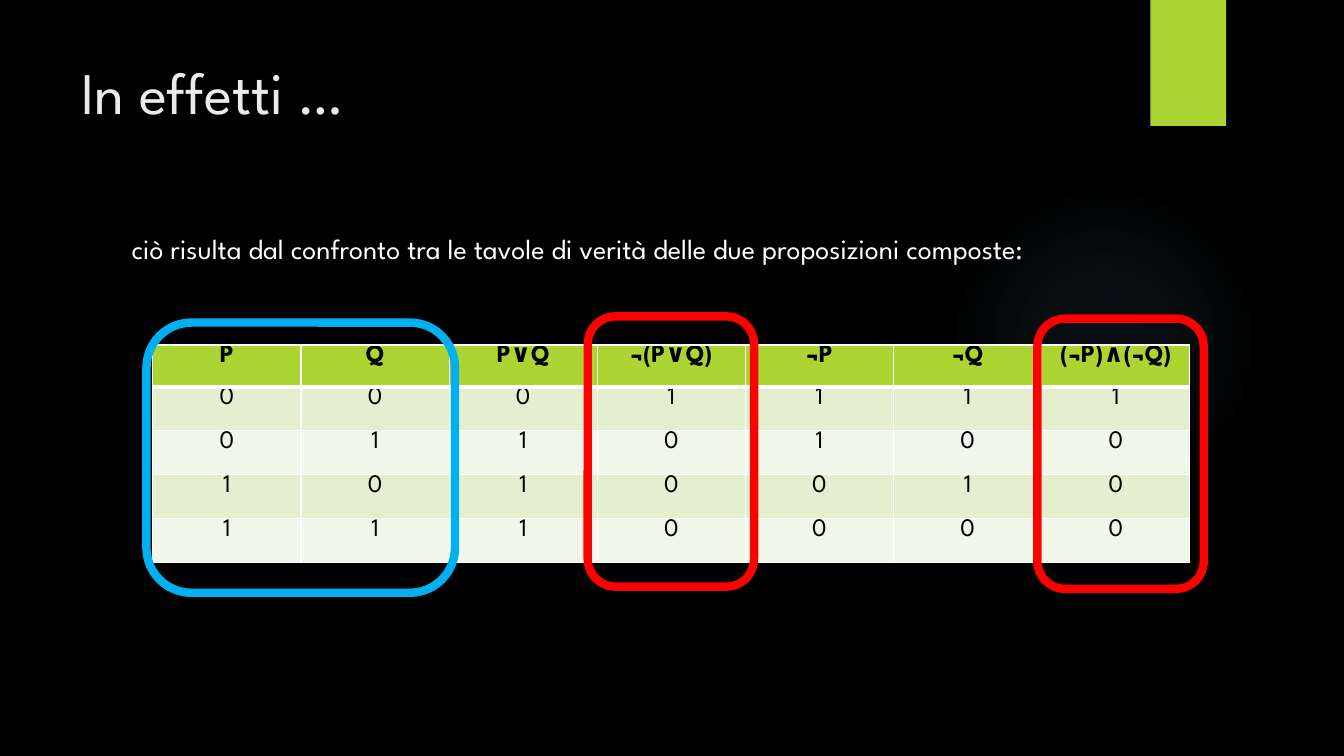
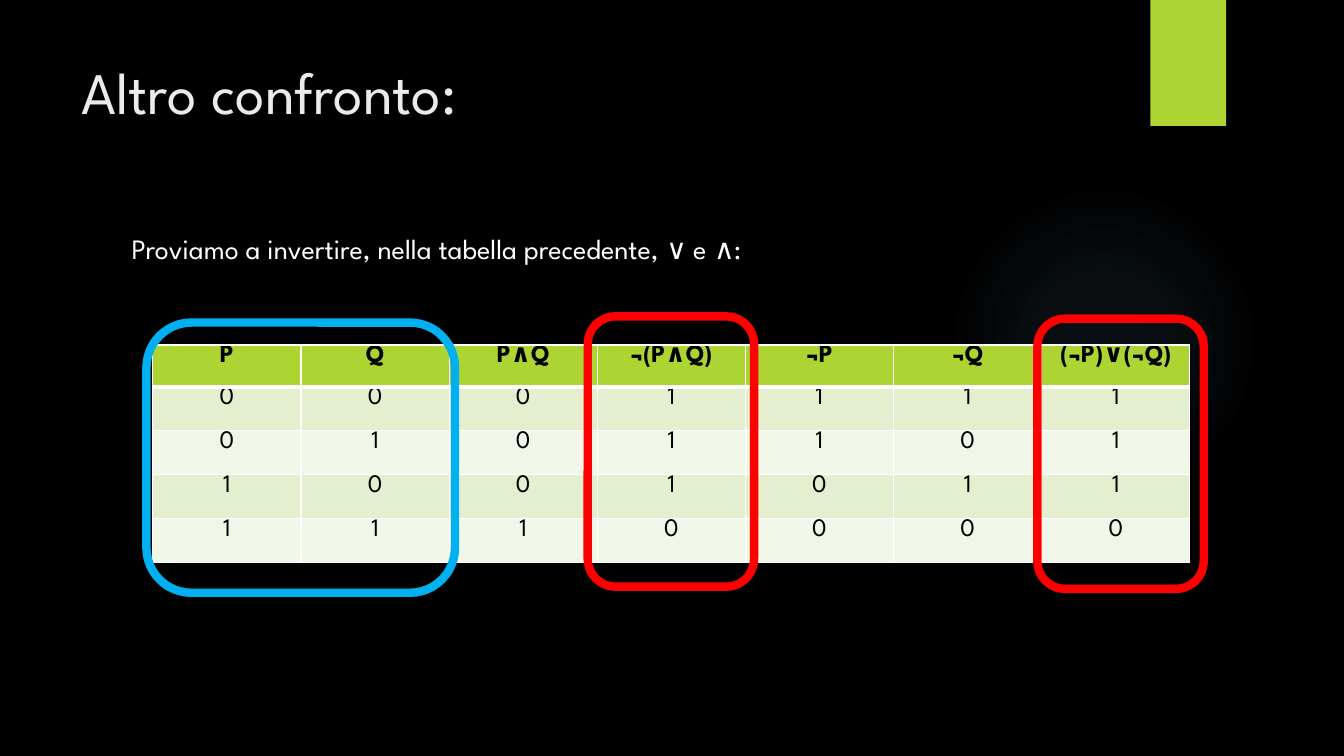
import pptx
import pptx.util
import pptx.dml.color
import pptx.enum.shapes
import pptx.enum.text
import pptx.oxml
import pptx.oxml.ns

Pt = pptx.util.Pt
RGB = pptx.dml.color.RGBColor
Shape = pptx.enum.shapes.MSO_SHAPE

BLACK = RGB(0x00, 0x00, 0x00)
WHITE = RGB(0xFF, 0xFF, 0xFF)
PALE = RGB(0xEB, 0xEB, 0xEB)
LIME = RGB(0xAC, 0xD4, 0x33)
GLOW = RGB(0x7A, 0xC4, 0xF0)
RED = RGB(0xFF, 0x00, 0x00)
BLUE = RGB(0x00, 0xB0, 0xF0)
STRIPES = [RGB(0xE3, 0xEF, 0xCE), RGB(0xF1, 0xF7, 0xE8)]
FONT = "League Spartan"

SLIDES = [
    {
        "title": "In effetti …",
        "lead": "ciò risulta dal confronto tra le tavole di verità "
                "delle due proposizioni composte:",
        "head": ["P", "Q", "P∨Q", "¬(P∨Q)", "¬P", "¬Q", "(¬P)∧(¬Q)"],
        "rows": ["0001111", "0110100", "1010010", "1110000"],
    },
    {
        "title": "Altro confronto:",
        "lead": "Proviamo a invertire, nella tabella precedente, ∨ e ∧:",
        "head": ["P", "Q", "P∧Q", "¬(P∧Q)", "¬P", "¬Q", "(¬P)∨(¬Q)"],
        "rows": ["0001111", "0101101", "1001011", "1110000"],
    },
]

# Boxes are left, top, width, height in points.
GLOW_BOX = (677.5, 131.8, 221.8, 221.8)
TAB_BOX = (821.8, 0, 54, 90)
TITLE_BOX = (51, 36, 741, 110)
LEAD_BOX = (87, 162, 704, 330)
TABLE_AT = (109.2, 246.4)
COL_W, HEAD_H, ROW_H = 105.84, 30, 31.4
RINGS = [
    ((419.8, 226, 118.8, 193), RED),
    ((741, 227.6, 118.8, 193), RED),
    ((104.6, 230.4, 220.4, 193), BLUE),
]
GLOW_STOPS = [(0, 7), (36, 6), (69, 0)]  # position and opacity, in percent


def parts(xml):
    """Build one element in the drawing namespace."""
    space = pptx.oxml.ns.nsdecls("a")
    return pptx.oxml.parse_xml(xml.replace(" ", f" {space} ", 1))


def add_shape(slide, kind, box, fill=None, line=None):
    shape = slide.shapes.add_shape(kind, *map(Pt, box))
    shape.shadow.inherit = False
    if fill is None:
        shape.fill.background()
    else:
        shape.fill.solid()
        shape.fill.fore_color.rgb = fill
    if line is None:
        shape.line.fill.background()
    else:
        shape.line.color.rgb = line
        shape.line.width = Pt(6)
    return shape


def add_decor(slide):
    glow = add_shape(slide, Shape.OVAL, GLOW_BOX)
    stops = "".join(
        f'<a:gs pos="{pos * 1000}"><a:srgbClr val="{GLOW}">'
        f'<a:alpha val="{alpha * 1000}"/></a:srgbClr></a:gs>'
        for pos, alpha in GLOW_STOPS)
    props = glow.element.spPr
    props.replace(props.find(pptx.oxml.ns.qn("a:noFill")), parts(
        f'<a:gradFill rotWithShape="1"><a:gsLst>{stops}</a:gsLst>'
        '<a:path path="circle"><a:fillToRect l="50000" t="50000" '
        'r="50000" b="50000"/></a:path></a:gradFill>'))

    tab = add_shape(slide, Shape.RECTANGLE, TAB_BOX, LIME)
    effects = tab.element.spPr.find(pptx.oxml.ns.qn("a:effectLst"))
    effects.append(parts(
        f'<a:outerShdw blurRad="{Pt(3)}" dist="{Pt(2)}" dir="5400000" '
        f'rotWithShape="0"><a:srgbClr val="{BLACK}">'
        '<a:alpha val="45000"/></a:srgbClr></a:outerShdw>'))


def set_font(para, size, color, bold=False):
    para.font.name = FONT
    para.font.size = Pt(size)
    para.font.color.rgb = color
    para.font.bold = bold


def add_text(slide, box, text, size, color):
    frame = slide.shapes.add_textbox(*map(Pt, box)).text_frame
    frame.word_wrap = True
    frame.text = text
    set_font(frame.paragraphs[0], size, color)


def set_borders(cell, top, bottom):
    """Draw white borders; they must come before the fill in the cell."""
    props = cell._tc.get_or_add_tcPr()
    for side, width in (("L", 1), ("R", 1), ("T", top), ("B", bottom)):
        props.append(parts(
            f'<a:ln{side} w="{Pt(width)}"><a:solidFill>'
            f'<a:srgbClr val="{WHITE}"/></a:solidFill></a:ln{side}>'))


def add_table(slide, head, rows):
    grid = [head, *rows]
    size = (COL_W * len(head), HEAD_H + ROW_H * len(rows))
    table = slide.shapes.add_table(
        len(grid), len(head), *map(Pt, TABLE_AT + size)).table
    for col in table.columns:
        col.width = Pt(COL_W)
    for i, values in enumerate(grid):
        table.rows[i].height = Pt(ROW_H if i else HEAD_H)
        for j, value in enumerate(values):
            cell = table.cell(i, j)
            cell.margin_top = cell.margin_bottom = 0
            set_borders(cell, 3 if i == 1 else 1, 1 if i else 3)
            cell.fill.solid()
            cell.fill.fore_color.rgb = STRIPES[(i - 1) % 2] if i else LIME
            cell.text = value
            para = cell.text_frame.paragraphs[0]
            para.alignment = pptx.enum.text.PP_ALIGN.CENTER
            set_font(para, 18, BLACK, bold=i == 0)


def main():
    deck = pptx.Presentation()
    deck.slide_width, deck.slide_height = Pt(960), Pt(540)
    back = deck.slide_master.background.fill
    back.solid()
    back.fore_color.rgb = BLACK
    for data in SLIDES:
        slide = deck.slides.add_slide(deck.slide_layouts[6])
        add_decor(slide)
        add_text(slide, TITLE_BOX, data["title"], 42, PALE)
        add_text(slide, LEAD_BOX, data["lead"], 20, WHITE)
        add_table(slide, data["head"], data["rows"])
        for box, color in RINGS:
            add_shape(slide, Shape.ROUNDED_RECTANGLE, box, line=color)
    deck.save("out.pptx")


if __name__ == "__main__":
    main()
